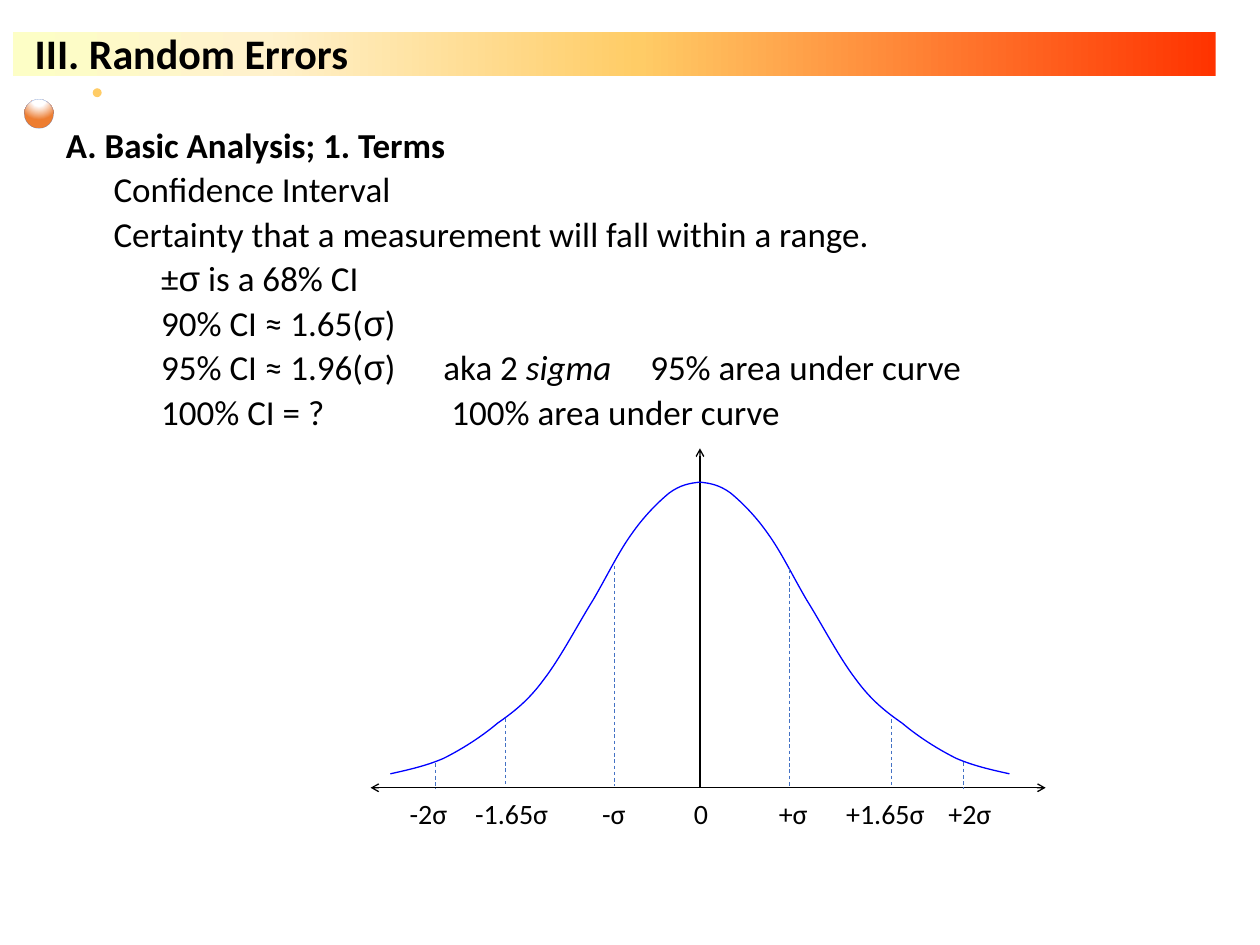
from dataclasses import dataclass

from lxml import etree
from pptx import Presentation
from pptx import util as u
from pptx.dml.color import RGBColor
from pptx.enum import dml, shapes, text
from pptx.oxml import parse_xml
from pptx.oxml.ns import nsdecls, qn


@dataclass(frozen=True)
class Theme:
    font: str = "Calibri"
    symbol_font: str = "Arial"
    ink: str = "000000"
    curve: str = "0000FF"
    marker: str = "4472C4"
    dot: str = "FFCC66"
    ball_edge: str = "3B6BC1"
    title_size: int = 24
    body_size: int = 20
    label_size: int = 16
    bar_stops: tuple = ((0, "FF3300"), (48, "FFCC66"), (79, "FFF2CC"), (100, "FDFEC6"))
    ball_stops: tuple = ((0, "FFFFFF"), (35, "FFFFFF"), (100, "ED7D31"))


@dataclass(frozen=True)
class Line:
    """A body line; σ takes the symbol font, *…* is italic."""
    content: str
    level: int = 0
    bold: bool = False
    tabs: tuple = ()


@dataclass(frozen=True)
class Mark:
    """An axis label, with the dashed marker above it (if any)."""
    label: str
    left: float
    width: float
    x: float = 0
    top: float = 0
    bottom: float = 0


THEME = Theme()
AXIS_X, AXIS_Y, LABEL_TOP = 14.11, 15.88, 15.93
INDENT = 0.96

LINES = [
    Line("A. Basic Analysis; 1. Terms", bold=True),
    Line("Confidence Interval", 1),
    Line("Certainty that a measurement will fall within a range.", 1),
    Line("±σ is a 68% CI", 2),
    Line("90% CI ≈ 1.65(σ)", 2),
    Line("95% CI ≈ 1.96(σ)\taka 2* sigma*\t95% area under curve", 2, tabs=(5.69, 9.86)),
    Line("100% CI = ?\t100% area under curve", 2, tabs=(5.85,)),
]

MARKS = [
    Mark("-2σ", 8.01, 1.27, 8.77, 15.39, 15.9),
    Mark("-1.65σ", 9.33, 1.98, 10.19, 14.48, 15.82),
    Mark("-σ", 11.89, 0.99, 12.39, 11.4, 15.85),
    Mark("0", 13.74, 0.81),
    Mark("+σ", 15.45, 1.09, 15.92, 11.48, 15.85),
    Mark("+1.65σ", 16.81, 2.11, 17.98, 14.5, 15.88),
    Mark("+2σ", 18.87, 1.4, 19.43, 15.37, 15.9),
]

# Bézier points of the left half; the right half mirrors it
HALF_CURVE = [
    (7.87, 15.6), (8.23, 15.52), (8.59, 15.44), (8.94, 15.29),
    (9.3, 15.11), (9.7, 14.86), (10.03, 14.58), (10.39, 14.33),
    (10.67, 14.1), (10.97, 13.69), (11.3, 13.26), (11.66, 12.57),
    (11.96, 12.09), (12.24, 11.61), (12.47, 11.13), (12.73, 10.77),
    (12.98, 10.41), (13.26, 10.13), (13.49, 9.94), (13.72, 9.77),
    (13.92, 9.74), (AXIS_X, 9.72),
]


def cm(*values: float) -> list:
    return [u.Cm(value) for value in values]


def apply(target, values: dict) -> None:
    for name, value in values.items():
        setattr(target, name, value)


def add_span(para, content: str, size: int, font: str = THEME.font, **styles) -> None:
    span = para.add_run()
    span.text = content
    apply(span.font, {"name": font, "size": u.Pt(size), **styles})
    span.font.color.rgb = RGBColor.from_string(THEME.ink)


def add_box(parent, frame: tuple, wrap: bool = True):
    box = parent.add_textbox(*cm(*frame))
    box.text_frame.word_wrap = wrap
    return box.text_frame


def add_plain(parent, kind, frame: tuple):
    shape = parent.add_shape(kind, *cm(*frame))
    shape.shadow.inherit = False
    shape.line.fill.background()
    return shape


def set_gradient(shape, stops: tuple, direction: str) -> None:
    marks = "".join(f'<a:gs pos="{place * 1000}"><a:srgbClr val="{color}"/></a:gs>'
                    for place, color in stops)
    gradient = parse_xml(f'<a:gradFill {nsdecls("a")} rotWithShape="1">'
                         f'<a:gsLst>{marks}</a:gsLst>{direction}</a:gradFill>')
    shape.fill.background()
    old = shape.fill._xPr.find(qn("a:noFill"))
    old.getparent().replace(old, gradient)


def add_line(parent, start: tuple, end: tuple, color: str, width: float,
             arrows: tuple = (), dashed: bool = False) -> None:
    line = parent.add_connector(shapes.MSO_CONNECTOR.STRAIGHT, *cm(*start, *end))
    line.line.color.rgb = RGBColor.from_string(color)
    line.line.width = u.Pt(width)
    if dashed:
        line.line.dash_style = dml.MSO_LINE.DASH
    for arrow in arrows:
        etree.SubElement(line.line._get_or_add_ln(), qn(f"a:{arrow}"),
                         type="arrow", w="sm", len="sm")
    etree.SubElement(line._element.spPr, qn("a:effectLst"))


def add_curve(parent, points: list) -> None:
    (x, y), *rest = points
    builder = parent.build_freeform(u.Cm(x), u.Cm(y))
    builder.add_line_segments([cm(*point) for point in rest], close=False)
    curve = builder.convert_to_shape()
    # Join every three points into one Bézier segment
    outline = curve._element.find(".//" + qn("a:path"))
    for number, straight in enumerate(outline.findall(qn("a:lnTo"))):
        if number % 3 == 0:
            bend = etree.SubElement(outline, qn("a:cubicBezTo"))
        bend.append(straight[0])
        outline.remove(straight)
    curve.shadow.inherit = False
    curve.fill.background()
    curve.line.color.rgb = RGBColor.from_string(THEME.curve)
    curve.line.width = u.Pt(0.75)


def add_body_line(para, line: Line) -> None:
    apply(para, {"level": line.level, "line_spacing": 0.9,
                 "space_before": u.Pt(3.8 if line.level else 7.5)})
    properties = para._p.get_or_add_pPr()
    properties.set("marL", str(u.Cm(INDENT * line.level)))
    if line.tabs:
        stops = etree.SubElement(properties, qn("a:tabLst"))
        for place in line.tabs:
            etree.SubElement(stops, qn("a:tab"), pos=str(u.Cm(place)), algn="l")
    for number, part in enumerate(line.content.split("*")):
        for piece in part.replace("σ", "|σ|").split("|"):
            if piece:
                font = THEME.symbol_font if piece == "σ" else THEME.font
                add_span(para, piece, THEME.body_size, font,
                         bold=line.bold, italic=number % 2 == 1)


def add_header(parent) -> None:
    bar = add_plain(parent, shapes.MSO_SHAPE.RECTANGLE, (0.26, 0.64, 24.25, 0.89))
    set_gradient(bar, THEME.bar_stops, '<a:lin ang="10800000" scaled="0"/>')
    title = add_box(parent, (0.45, 0.43, 18.52, 1.27))
    add_span(title.paragraphs[0], "III. Random Errors", THEME.title_size, bold=True)

    ball = add_plain(parent, shapes.MSO_SHAPE.OVAL, (0.49, 2, 0.59, 0.59))
    set_gradient(ball, THEME.ball_stops, '<a:path path="circle"><a:fillToRect '
                 'l="50000" t="-80000" r="50000" b="180000"/></a:path>')
    ball.line.color.rgb = RGBColor.from_string(THEME.ball_edge)
    ball.line.width = u.Pt(0.16)
    edge = ball.line._get_or_add_ln().find(".//" + qn("a:srgbClr"))
    etree.SubElement(edge, qn("a:alpha"), val="60000")
    dot = add_plain(parent, shapes.MSO_SHAPE.OVAL, (1.87, 1.78, 0.18, 0.18))
    dot.fill.solid()
    dot.fill.fore_color.rgb = RGBColor.from_string(THEME.dot)


def add_bell_diagram(parent) -> None:
    add_line(parent, (7.47, AXIS_Y), (21.08, AXIS_Y), THEME.ink, 0.75, ("headEnd", "tailEnd"))
    add_line(parent, (AXIS_X, 9.04), (AXIS_X, AXIS_Y), THEME.ink, 0.75, ("headEnd",))
    add_curve(parent, HALF_CURVE)
    add_curve(parent, [(2 * AXIS_X - x, y) for x, y in HALF_CURVE])
    for mark in MARKS:
        if mark.x:
            add_line(parent, (mark.x, mark.top), (mark.x, mark.bottom),
                     THEME.marker, 0.5, dashed=True)
        label = add_box(parent, (mark.left, LABEL_TOP, mark.width, 0.94), wrap=False)
        label.auto_size = text.MSO_AUTO_SIZE.SHAPE_TO_FIT_TEXT
        add_span(label.paragraphs[0], mark.label, THEME.label_size)


def main() -> None:
    deck = Presentation()
    apply(deck, {"slide_width": u.Cm(25.4), "slide_height": u.Cm(19.05)})
    page = deck.slides.add_slide(deck.slide_layouts[6])
    add_header(page.shapes)

    # Body text
    body = add_box(page.shapes, (1.08, 2.46, 21.89, 14.88))
    for number, line in enumerate(LINES):
        add_body_line(body.add_paragraph() if number else body.paragraphs[0], line)

    # Normal distribution
    add_bell_diagram(page.shapes.add_group_shape().shapes)
    deck.save("out.pptx")


if __name__ == "__main__":
    main()
